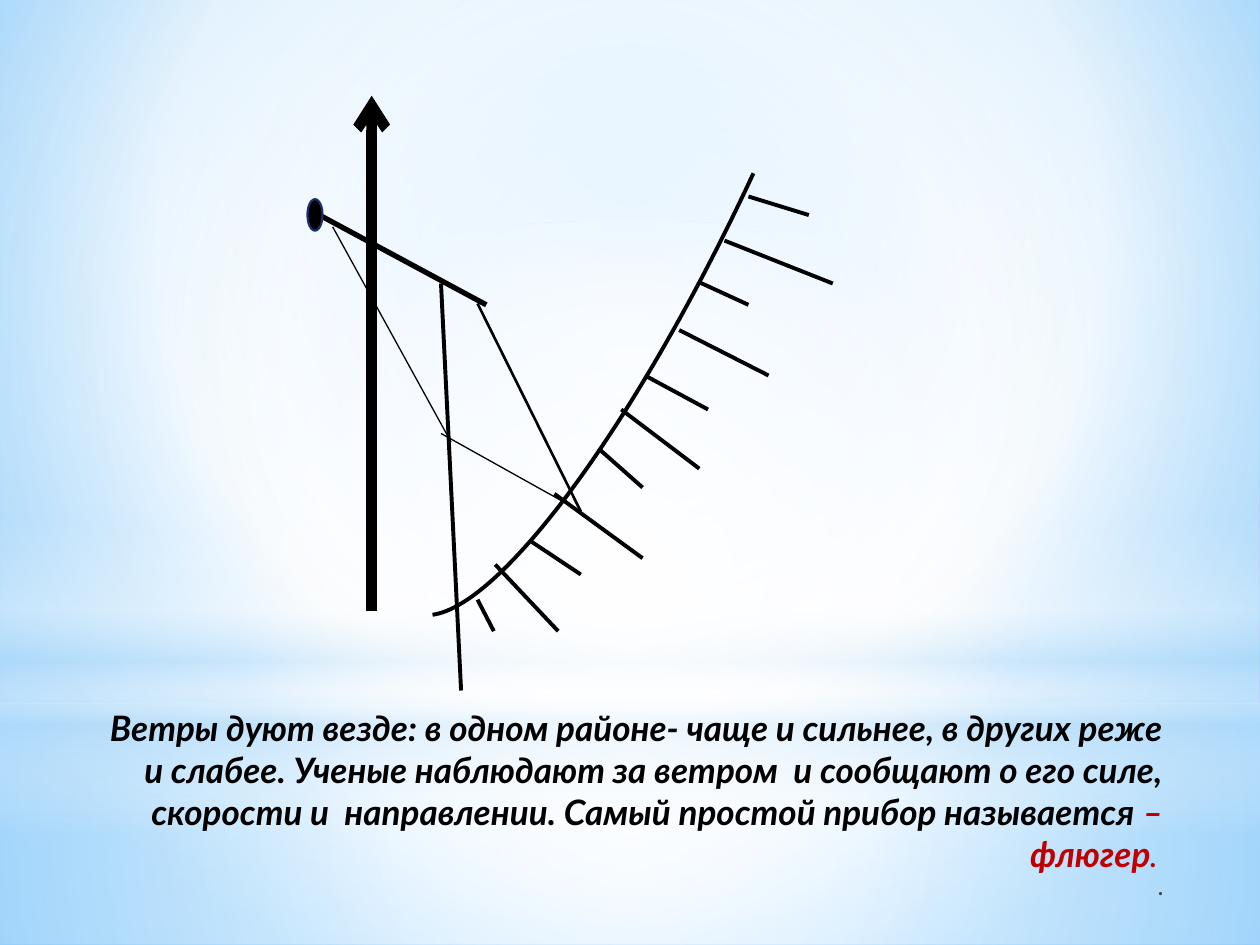
from dataclasses import dataclass

from lxml.etree import SubElement
from pptx import Presentation
from pptx.dml.color import RGBColor
from pptx.enum.shapes import MSO_CONNECTOR, MSO_SHAPE
from pptx.enum.text import MSO_ANCHOR, PP_ALIGN
from pptx.oxml.ns import qn
from pptx.util import Pt


@dataclass(frozen=True)
class Theme:
    """Colours, font, type sizes and line weights of the slide."""
    ink: str = "000000"
    accent: str = "C00000"
    grey: str = "404040"
    navy: str = "1F2E69"
    white: str = "FFFFFF"
    pale: str = "B4DCFA"
    sky: str = "9ED5FF"
    deep: str = "5BB9FF"
    font: str = "Lato"
    body: float = 20
    stop: float = 16
    small: float = 12
    mast: float = 6
    bar: float = 3
    stroke: float = 2.25
    cord: float = 1.5
    outline: float = 1.25
    thin: float = 0.75


THEME = Theme()
CENTRE = (50, 50, 50, 50)
TICKS = [
    (272.9, 342.7, 282.2, 360.7), (283, 322.6, 319, 360.7),
    (303.8, 309.6, 331.9, 328.3), (316.8, 282.2, 367.2, 319),
    (342, 256.3, 367.2, 278.6), (355, 234, 399.6, 267.8),
    (368.6, 214.6, 404.6, 234), (388.1, 188.6, 439.2, 214.6),
    (399.6, 161.3, 427.7, 174.2), (414, 137.5, 475.9, 162),
    (427.7, 112.3, 462.2, 122.9),
]


def rgb(color):
    """Turn a hex string into a colour."""
    return RGBColor.from_string(color)


def set_gradient(fill, parent, stops, focus=None):
    """Fill with (position, colour, opacity) stops, radial if focus is given."""
    fill.solid()
    solid = parent.find(qn("a:solidFill"))
    grad = parent.makeelement(qn("a:gradFill"), {"rotWithShape": "1"})
    parent.replace(solid, grad)
    gs_lst = SubElement(grad, qn("a:gsLst"))
    for pos, color, opacity in stops:
        gs = SubElement(gs_lst, qn("a:gs"), pos=str(pos * 1000))
        clr = SubElement(gs, qn("a:srgbClr"), val=color)
        if opacity < 100:
            SubElement(clr, qn("a:alpha"), val=str(opacity * 1000))
    if focus:
        radial = SubElement(grad, qn("a:path"), {"path": "circle"})
        rect = {side: str(v * 1000) for side, v in zip("ltrb", focus)}
        SubElement(radial, qn("a:fillToRect"), rect)
    else:
        SubElement(grad, qn("a:lin"), ang="5400000", scaled="0")


def add_background(s):
    """Give the slide its radial sky."""
    fill = s.background.fill
    fill.solid()
    set_gradient(fill, s.element.find(".//" + qn("p:bgPr")),
                 [(0, THEME.sky, 100), (60, THEME.white, 100),
                  (100, THEME.deep, 100)], (20, 10, 20, 60))


def add_shape(s, kind, left, top, width, height):
    """Add a preset shape without a shadow."""
    sp = s.shapes.add_shape(kind, Pt(left), Pt(top), Pt(width), Pt(height))
    sp.shadow.inherit = False
    return sp


def add_glow(s, kind, top, height, stops, focus=None):
    """Add a full-width translucent panel."""
    sp = add_shape(s, kind, 0, top, 720, height)
    set_gradient(sp.fill, sp.element.spPr, stops, focus)
    sp.line.fill.background()


def add_line(s, x1, y1, x2, y2, weight, arrow=False):
    """Add a straight black line, with an arrowhead at its end if asked."""
    cxn = s.shapes.add_connector(
        MSO_CONNECTOR.STRAIGHT, Pt(x1), Pt(y1), Pt(x2), Pt(y2))
    cxn.line.color.rgb = rgb(THEME.ink)
    cxn.line.width = Pt(weight)
    if arrow:
        SubElement(cxn.line._get_or_add_ln(), qn("a:tailEnd"), type="arrow")
    SubElement(cxn.element.spPr, qn("a:effectLst"))


def add_counterweight(s):
    """Add the black ball at the end of the vane."""
    sp = add_shape(s, MSO_SHAPE.FLOWCHART_CONNECTOR, 175.7, 113.8, 8.6, 18)
    sp.fill.solid()
    sp.fill.fore_color.rgb = rgb(THEME.ink)
    sp.line.color.rgb = rgb(THEME.navy)
    sp.line.width = Pt(THEME.outline)


def add_scale_arc(s):
    """Add the curved scale of the wind gauge."""
    sp = add_shape(s, MSO_SHAPE.ARC, 296.6, -239.8, 140.4, 618.5)
    sp.adjustments[0] = 163.135
    sp.adjustments[1] = 0
    sp.rotation = 204.9
    sp.element.spPr.find(qn("a:xfrm")).set("flipH", "1")
    sp.fill.background()
    sp.line.color.rgb = rgb(THEME.ink)
    sp.line.width = Pt(THEME.stroke)


def add_run(p, text, size, color, italic=True):
    """Add a bold run to a paragraph."""
    r = p.add_run()
    r.text = text
    r.font.name = THEME.font
    r.font.size = Pt(size)
    r.font.bold = True
    r.font.italic = italic
    r.font.color.rgb = rgb(color)


def add_caption(s):
    """Add the right-aligned text about the wind vane."""
    tf = s.shapes.add_textbox(Pt(42.5), Pt(400.3), Pt(629.3), Pt(108)).text_frame
    tf.word_wrap = True
    tf.vertical_anchor = MSO_ANCHOR.TOP
    p = tf.paragraphs[0]
    p.alignment = PP_ALIGN.RIGHT
    add_run(p, "Ветры дуют везде: в одном районе- чаще и сильнее, в других реже "
               "и слабее. Ученые наблюдают за ветром  и сообщают о его силе, "
               "скорости и  направлении. Самый простой прибор называется ",
            THEME.body, THEME.ink)
    add_run(p, "– флюгер", THEME.body, THEME.accent)
    add_run(p, ". ", THEME.stop, THEME.accent)
    p.add_line_break()
    add_run(p, ".", THEME.small, THEME.grey, italic=False)


def main():
    """Build the slide and save it."""
    prs = Presentation()
    prs.slide_width, prs.slide_height = Pt(720), Pt(540)
    s = prs.slides.add_slide(prs.slide_layouts[6])
    white, pale = THEME.white, THEME.pale

    add_background(s)
    add_glow(s, MSO_SHAPE.RECTANGLE, 401.8, 138.2,
             [(0, white, 91), (37, white, 76), (100, pale, 79)], CENTRE)
    add_glow(s, MSO_SHAPE.RECTANGLE, 0, 401.8,
             [(0, white, 89), (48, white, 62), (100, pale, 79)], CENTRE)
    add_glow(s, MSO_SHAPE.RECTANGLE, 296.6, 180,
             [(0, white, 0), (29, white, 30), (45, pale, 40),
              (55, white, 26), (65, pale, 60), (100, white, 0)])
    add_glow(s, MSO_SHAPE.OVAL, 126, 401.8,
             [(0, white, 100), (56, white, 0)], CENTRE)

    add_caption(s)
    add_line(s, 212.4, 349.2, 212.4, 54.7, THEME.mast, arrow=True)
    add_line(s, 182.9, 123.1, 277.9, 174.2, THEME.bar)
    add_counterweight(s)
    add_line(s, 272.9, 173.5, 331.9, 292.3, THEME.cord)
    add_line(s, 190.1, 129.6, 257.8, 252.7, THEME.thin)
    add_line(s, 252, 247.7, 331.9, 292.3, THEME.thin)
    add_line(s, 252, 162, 263.5, 394.6, THEME.stroke)
    add_scale_arc(s)
    for tick in TICKS:
        add_line(s, *tick, THEME.stroke)
    prs.save("out.pptx")


if __name__ == "__main__":
    main()
